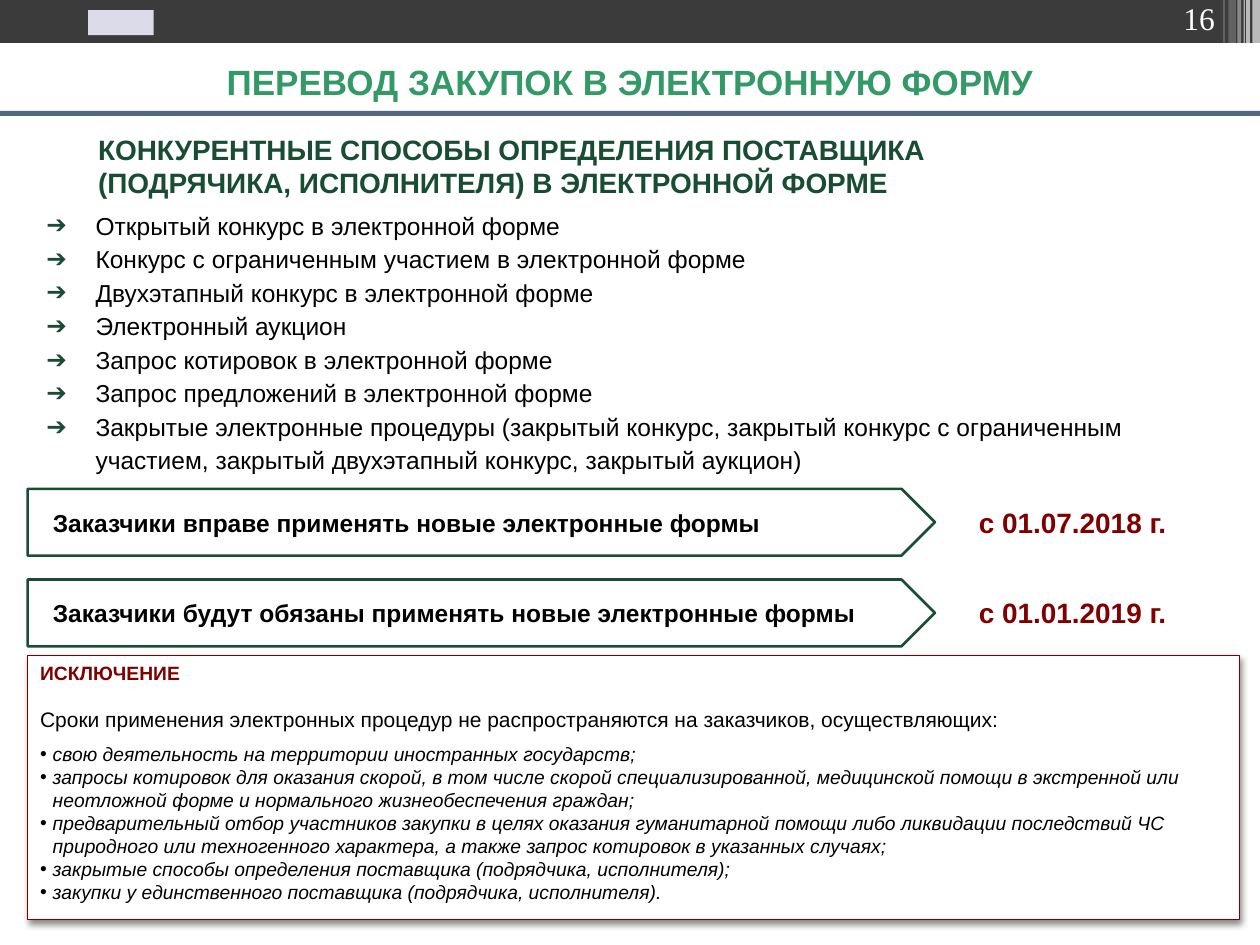
import dataclasses

import lxml.etree
import pptx
import pptx.dml.color
import pptx.enum.shapes
import pptx.enum.text
import pptx.oxml.ns
import pptx.util

Inches = pptx.util.Inches
Pt = pptx.util.Pt
Shape = pptx.enum.shapes.MSO_SHAPE
Align = pptx.enum.text.PP_ALIGN
Anchor = pptx.enum.text.MSO_ANCHOR
qn = pptx.oxml.ns.qn


@dataclasses.dataclass(frozen=True)
class Theme:
    sans: str = "Arial"
    serif: str = "Times New Roman"
    bar: str = "3B3B3B"
    mark: str = "DBDBE9"
    rule: str = "546682"
    title: str = "339966"
    green: str = "194D33"
    red: str = "800000"
    black: str = "000000"
    white: str = "FFFFFF"
    head: int = 20
    page: int = 18
    sub: int = 16
    body: int = 14
    lead: int = 12
    note: int = 11


THEME = Theme()

STRIPES = [
    (9.94, 0.06, 65),
    (9.89, 0.03, 65),
    (9.87, 0.01, 60),
    (9.82, 0.03, 40),
    (9.75, 0.06, 20),
    (9.71, 0.01, 30),
]

METHODS = [
    "Открытый конкурс в электронной форме",
    "Конкурс с ограниченным участием в электронной форме",
    "Двухэтапный конкурс в электронной форме",
    "Электронный аукцион",
    "Запрос котировок в электронной форме",
    "Запрос предложений в электронной форме",
    "Закрытые электронные процедуры (закрытый конкурс, закрытый конкурс с ограниченным "
    "участием, закрытый двухэтапный конкурс, закрытый аукцион)",
]

DATES = [
    ("Заказчики вправе применять новые электронные формы", "с 01.07.2018 г."),
    ("Заказчики будут обязаны применять новые электронные формы", "с 01.01.2019 г."),
]

EXEMPT = [
    "свою деятельность на территории иностранных государств;",
    "запросы котировок для оказания скорой, в том числе скорой специализированной, "
    "медицинской помощи в экстренной или неотложной форме и нормального "
    "жизнеобеспечения граждан;",
    "предварительный отбор участников закупки в целях оказания гуманитарной помощи либо "
    "ликвидации последствий ЧС природного или техногенного характера, а также запрос "
    "котировок в указанных случаях;",
    "закрытые способы определения поставщика (подрядчика, исполнителя);",
    "закупки у единственного поставщика (подрядчика, исполнителя).",
]


def rgb(color):
    return pptx.dml.color.RGBColor.from_string(color)


def place(box):
    return [Inches(side) for side in box]


def add_run(para, text, size, color, bold=False, italic=False, face=THEME.sans):
    run = para.add_run()
    run.text = text
    font = run.font
    font.name, font.size, font.bold, font.italic = face, Pt(size), bold, italic
    font.color.rgb = rgb(color)


def add_bullet(para, mark, color, indent):
    props = para._p.get_or_add_pPr()
    props.set("marL", str(Inches(indent)))
    props.set("indent", str(-Inches(indent)))
    tint = lxml.etree.SubElement(props, qn("a:buClr"))
    lxml.etree.SubElement(tint, qn("a:srgbClr"), val=color)
    lxml.etree.SubElement(props, qn("a:buFont"), typeface=THEME.sans)
    lxml.etree.SubElement(props, qn("a:buChar"), char=mark)


def add_block(slide, kind, box, fill, line=None, width=1, alpha=100):
    block = slide.shapes.add_shape(kind, *place(box))
    block.shadow.inherit = False
    block.fill.solid()
    block.fill.fore_color.rgb = rgb(fill)
    if alpha < 100:
        tint = block._element.spPr.find(qn("a:solidFill"))[0]
        lxml.etree.SubElement(tint, qn("a:alpha"), val=str(alpha * 1000))
    if line:
        block.line.color.rgb = rgb(line)
        block.line.width = Pt(width)
    else:
        block.line.fill.background()
    return block


def add_shadow(block):
    effects = block._element.spPr.find(qn("a:effectLst"))
    shade = lxml.etree.SubElement(
        effects, qn("a:outerShdw"), blurRad=str(Pt(4)), dist=str(Pt(2)),
        dir="5400000", rotWithShape="0")
    tint = lxml.etree.SubElement(shade, qn("a:srgbClr"), val=THEME.black)
    lxml.etree.SubElement(tint, qn("a:alpha"), val="45000")


def set_frame(frame, anchor=Anchor.TOP):
    frame.word_wrap = True
    frame.auto_size = pptx.enum.text.MSO_AUTO_SIZE.NONE
    frame.vertical_anchor = anchor
    return frame


def add_text(slide, box, anchor=Anchor.TOP):
    return set_frame(slide.shapes.add_textbox(*place(box)).text_frame, anchor)


def next_para(frame, index):
    return frame.add_paragraph() if index else frame.paragraphs[0]


def draw_bar(slide):
    add_block(slide, Shape.RECTANGLE, (0, 0, 10, 0.34), THEME.bar)
    for left, width, alpha in STRIPES:
        add_block(slide, Shape.RECTANGLE, (left, 0, width, 0.34), THEME.white, alpha=alpha)
    add_block(slide, Shape.RECTANGLE, (0.7, 0.08, 0.52, 0.2), THEME.mark)
    para = add_text(slide, (8.12, 0, 1.62, 0.34), Anchor.BOTTOM).paragraphs[0]
    para.alignment = Align.RIGHT
    add_run(para, "16", THEME.page, THEME.white, face=THEME.serif)


def draw_title(slide):
    title = slide.shapes.title
    title.left, title.top, title.width, title.height = place((0, 0.36, 10, 0.57))
    para = set_frame(title.text_frame, Anchor.MIDDLE).paragraphs[0]
    para.alignment = Align.CENTER
    add_run(para, "ПЕРЕВОД ЗАКУПОК В ЭЛЕКТРОННУЮ ФОРМУ", THEME.head, THEME.title, bold=True)
    add_block(slide, Shape.RECTANGLE, (0, 0.88, 10, 0.04), THEME.rule)


def draw_methods(slide):
    para = add_text(slide, (0.68, 1, 8.58, 0.64)).paragraphs[0]
    add_run(para, "КОНКУРЕНТНЫЕ СПОСОБЫ ОПРЕДЕЛЕНИЯ ПОСТАВЩИКА", THEME.sub, THEME.green, bold=True)
    para.add_line_break()
    add_run(para, "(ПОДРЯЧИКА, ИСПОЛНИТЕЛЯ) В ЭЛЕКТРОННОЙ ФОРМЕ", THEME.sub, THEME.green, bold=True)
    frame = add_text(slide, (0.27, 1.59, 9.47, 2.25))
    for index, text in enumerate(METHODS):
        para = next_para(frame, index)
        add_bullet(para, "➔", THEME.green, 0.39)
        para.line_spacing = 1.14
        add_run(para, text, THEME.body, THEME.black)


def draw_dates(slide):
    for index, (text, date) in enumerate(DATES):
        top = 3.88 + index * 0.72
        arrow = add_block(slide, Shape.PENTAGON, (0.22, top, 7.2, 0.53),
                          THEME.white, THEME.green, 1.5)
        frame = set_frame(arrow.text_frame, Anchor.MIDDLE)
        frame.margin_left = Inches(0.2)
        para = frame.paragraphs[0]
        para.alignment = Align.LEFT
        add_run(para, text, THEME.body, THEME.black, bold=True)
        para = add_text(slide, (7.67, top + 0.08, 1.69, 0.37)).paragraphs[0]
        add_run(para, date, THEME.sub, THEME.red, bold=True)


def draw_exempt(slide):
    panel = add_block(slide, Shape.RECTANGLE, (0.22, 5.2, 9.62, 2.1),
                      THEME.white, THEME.red, 0.75)
    add_shadow(panel)
    frame = set_frame(panel.text_frame)
    add_run(frame.paragraphs[0], "ИСКЛЮЧЕНИЕ", THEME.note, THEME.red, bold=True)
    para = frame.add_paragraph()
    para.space_before, para.space_after = Pt(12.6), Pt(5.8)
    add_run(para, "Сроки применения электронных процедур не распространяются на заказчиков, "
            "осуществляющих:", THEME.lead, THEME.black)
    for text in EXEMPT:
        para = frame.add_paragraph()
        add_bullet(para, "•", THEME.black, 0.1)
        add_run(para, text, THEME.note, THEME.black, italic=True)
    for para in frame.paragraphs:
        para.alignment = Align.LEFT


def main():
    deck = pptx.Presentation()
    deck.slide_width, deck.slide_height = Inches(10), Inches(7.5)
    slide = deck.slides.add_slide(deck.slide_layouts[5])
    draw_bar(slide)
    draw_title(slide)
    draw_exempt(slide)
    draw_methods(slide)
    draw_dates(slide)
    deck.save("out.pptx")


if __name__ == "__main__":
    main()
